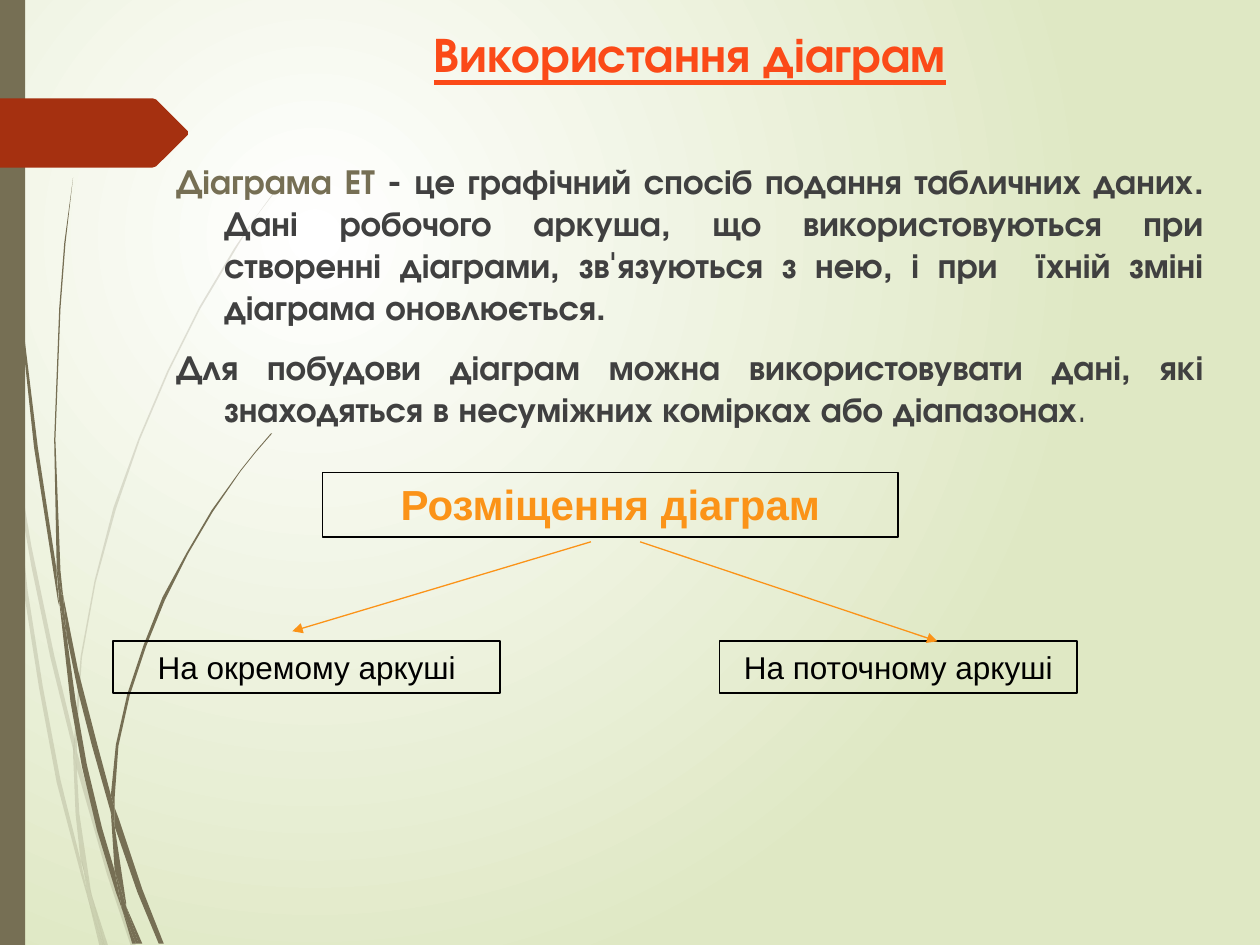
from dataclasses import dataclass

from lxml import etree
from pptx import Presentation
from pptx.dml.color import RGBColor
from pptx.enum import shapes, text
from pptx.oxml import ns
from pptx.util import Inches, Pt


@dataclass(frozen=True)
class Theme:
    olive: str = "766F54"
    rust: str = "A53010"
    title: str = "FB4A18"
    body: str = "404040"
    accent: str = "FB9318"
    black: str = "000000"
    bg_inner: str = "FFFFFF"
    bg_outer: str = "DFE8C4"
    body_font: str = "TeX Gyre Adventor"
    box_font: str = "Arial"
    title_size: int = 28
    body_size: int = 20
    head_size: int = 24
    box_size: int = 18


T = Theme()

# Outlines of the blades of grass, in inches
PALE_BLADES = [
    [(0.08, 3.5), (0.06, 3.22), (0, 2.82), (0, 2.99), (0.07, 3.44)],
    [(0.4, 5.22), (0.59, 5.99), (0.59, 5.86), (0.43, 5.2), (0.25, 4.34),
     (0.1, 3.45), (0.12, 3.76), (0.25, 4.5)],
    [(0.64, 6.07), (0.61, 5.96), (0.61, 6.1), (0.85, 6.94), (1.04, 7.51),
     (1.08, 7.51), (0.88, 6.92)],
    [(0.83, 7.51), (0.86, 7.51), (0.73, 7.11)],
    [(0.64, 6.83), (0.48, 6.19), (0.34, 5.45), (0.22, 4.69), (0.12, 3.76),
     (0.08, 3.5), (0.19, 4.7), (0.31, 5.46), (0.45, 6.21), (0.64, 6.93),
     (0.7, 7.14), (0.69, 7.07)],
    [(0.58, 5.99), (0.6, 6.46), (0.64, 6.83), (0.67, 6.92), (0.73, 7.11),
     (0.72, 7.06), (0.63, 6.46), (0.61, 6.1), (0.61, 6.08)],
    [(0.61, 5.84), (0.65, 5.22), (0.76, 4.62), (0.92, 4.04), (1.11, 3.49),
     (1.34, 2.95), (1.59, 2.45), (1.87, 1.98), (2.01, 1.75), (2.17, 1.54),
     (2.17, 1.53), (2.01, 1.75), (1.86, 1.97), (1.58, 2.44), (1.33, 2.94),
     (1.1, 3.48), (0.9, 4.03), (0.75, 4.61), (0.64, 5.21), (0.59, 5.84),
     (0.59, 5.86), (0.61, 5.96)],
    [(0.7, 7.14), (0.79, 7.51), (0.82, 7.51)],
    [(0.61, 6.08), (0.61, 6.1), (0.61, 5.96), (0.59, 5.86), (0.58, 5.99)],
    [(0.67, 6.92), (0.65, 6.83), (0.69, 7.07), (0.7, 7.14), (0.82, 7.51),
     (0.83, 7.51), (0.73, 7.11)],
]
DARK_BLADES = [
    [(0.05, 1.1), (0.14, 2.33), (0.27, 3.55), (0.46, 4.77), (0.47, 4.81),
     (0.45, 4.57), (0.45, 4.53), (0.3, 3.55), (0.15, 2.32), (0.06, 1.09),
     (0.04, 0.48), (0.03, 0), (0.02, 0), (0.03, 0.48)],
    [(0.73, 5.92), (0.88, 6.45), (0.88, 6.33), (0.88, 6.31), (0.77, 5.9),
     (0.62, 5.32), (0.5, 4.72), (0.53, 5.05), (0.62, 5.49)],
    [(0.94, 6.49), (0.91, 6.41), (0.91, 6.56), (1.09, 7.08), (1.26, 7.49),
     (1.3, 7.49), (1.13, 7.06)],
    [(0.91, 6.91), (0.81, 6.57), (0.69, 6.07), (0.6, 5.56), (0.53, 5.05),
     (0.47, 4.77), (0.56, 5.57), (0.65, 6.08), (0.77, 6.59), (0.92, 7.08),
     (0.97, 7.22), (0.96, 7.17)],
    [(0.5, 4.72), (0.48, 4.53), (0.44, 3.49), (0.48, 2.45), (0.52, 1.93),
     (0.58, 1.41), (0.51, 1.93), (0.47, 2.45), (0.43, 3.49), (0.45, 4.49),
     (0.49, 4.72)],
    [(1.1, 7.49), (1.13, 7.49), (1, 7.19)],
    [(0.47, 4.77), (0.53, 5.05), (0.5, 4.72), (0.49, 4.72), (0.45, 4.49),
     (0.45, 4.53)],
    [(0.91, 6.33), (0.94, 5.92), (1.03, 5.52), (1.16, 5.13), (1.31, 4.76),
     (1.49, 4.4), (1.69, 4.06), (1.91, 3.74), (2.03, 3.59), (2.16, 3.44),
     (2.15, 3.44), (2.03, 3.58), (1.91, 3.73), (1.68, 4.05), (1.48, 4.39),
     (1.29, 4.74), (1.14, 5.12), (1.01, 5.51), (0.92, 5.91), (0.88, 6.31),
     (0.91, 6.41)],
    [(0.97, 7.22), (1.05, 7.49), (1.08, 7.49)],
    [(0.88, 6.45), (0.91, 6.91), (0.96, 7.06), (1, 7.19), (1, 7.16),
     (0.91, 6.56), (0.9, 6.51)],
    [(0.88, 6.45), (0.9, 6.51), (0.91, 6.56), (0.91, 6.41), (0.88, 6.31),
     (0.88, 6.33)],
    [(0.96, 7.06), (0.91, 6.91), (0.96, 7.17), (0.97, 7.22), (1.08, 7.49),
     (1.1, 7.49), (1, 7.19)],
]
ARROW_TAG = [(0, 0.78), (1.21, 0.78), (1.24, 0.79), (1.49, 1.04),
             (1.49, 1.07), (1.24, 1.32), (1.21, 1.33), (0, 1.33)]


def rgb(value):
    return RGBColor.from_string(value)


def set_background(slide):
    fill = slide.background.fill
    fill.gradient()
    for stop, color in zip(fill.gradient_stops, (T.bg_inner, T.bg_outer)):
        stop.color.rgb = rgb(color)
    # Radial gradient centred in the upper left
    lin = slide.element.find(".//" + ns.qn("a:lin"))
    radial = etree.Element(ns.qn("a:path"), path="circle")
    etree.SubElement(radial, ns.qn("a:fillToRect"),
                     l="50000", t="50000", r="100000", b="100000")
    lin.getparent().replace(lin, radial)


def paint(sp, color, alpha=100):
    sp.shadow.inherit = False
    sp.line.fill.background()
    sp.fill.solid()
    sp.fill.fore_color.rgb = rgb(color)
    if alpha < 100:
        clr = sp.element.spPr.find(".//" + ns.qn("a:srgbClr"))
        etree.SubElement(clr, ns.qn("a:alpha"), val=str(alpha * 1000))


def add_polygon(parent, points, color, alpha=100):
    start, *rest = [(Inches(x), Inches(y)) for x, y in points]
    builder = parent.build_freeform(*start)
    builder.add_line_segments(rest, close=True)
    paint(builder.convert_to_shape(), color, alpha)


def add_decoration(slide):
    for blades, alpha in ((PALE_BLADES, 20), (DARK_BLADES, 100)):
        group = slide.shapes.add_group_shape()
        for points in blades:
            add_polygon(group.shapes, points, T.olive, alpha)
    bar = slide.shapes.add_shape(shapes.MSO_SHAPE.RECTANGLE, 0, 0,
                                 Inches(0.2), Inches(7.5))
    paint(bar, T.olive)
    add_polygon(slide.shapes, ARROW_TAG, T.rust)


def add_paragraph(tf, runs, size, align, before):
    p = tf.paragraphs[0] if not tf.paragraphs[0].runs else tf.add_paragraph()
    p.alignment, p.space_before = align, Pt(before)
    p.font.name, p.font.size, p.font.bold = T.body_font, Pt(size), True
    pPr = p._p.get_or_add_pPr()
    pPr.set("marL", str(Inches(0.38)))
    pPr.set("indent", str(-Inches(0.38)))
    for content, color in runs:
        r = p.add_run()
        r.text = content
        r.font.color.rgb = rgb(color)
    return p


def add_body(slide):
    tf = slide.shapes.add_textbox(Inches(1.3), Inches(0.14), Inches(8.35),
                                  Inches(5.15)).text_frame
    tf.word_wrap = True
    p = add_paragraph(tf, [("Використання діаграм", T.title)],
                      T.title_size, text.PP_ALIGN.CENTER, 10)
    p.runs[0].font.underline = True
    justify = text.PP_ALIGN.JUSTIFY
    add_paragraph(tf, [
        ("Діаграма ЕТ", T.olive),
        (" - це графічний спосіб подання табличних даних. Дані робочого "
         "аркуша, що використовуються при створенні діаграми, зв'язуються "
         "з нею, і при  їхній зміні діаграма оновлюється.", T.body),
    ], T.body_size, justify, 44)
    p = add_paragraph(tf, [
        ("Для побудови діаграм можна використовувати дані, які знаходяться "
         "в несуміжних комірках або діапазонах", T.body),
        (".", T.body),
    ], T.body_size, justify, 10)
    p.runs[-1].font.bold = False


def add_box(slide, x, y, w, h, label, size, color, bold=False):
    sp = slide.shapes.add_shape(shapes.MSO_SHAPE.RECTANGLE, Inches(x),
                                Inches(y), Inches(w), Inches(h))
    sp.shadow.inherit = False
    sp.fill.background()
    sp.line.color.rgb = rgb(T.black)
    sp.line.width = Pt(1)
    tf = sp.text_frame
    tf.word_wrap = True
    tf.vertical_anchor = text.MSO_ANCHOR.TOP
    p = tf.paragraphs[0]
    p.text = label
    p.alignment = text.PP_ALIGN.CENTER
    p.font.name, p.font.size, p.font.bold = T.box_font, Pt(size), bold
    p.font.color.rgb = rgb(color)


def add_arrow(slide, x1, y1, x2, y2):
    line = slide.shapes.add_connector(
        shapes.MSO_CONNECTOR.STRAIGHT, Inches(x1), Inches(y1),
        Inches(x2), Inches(y2))
    line.line.color.rgb = rgb(T.accent)
    line.line.width = Pt(0.75)
    ln = line.element.spPr.find(ns.qn("a:ln"))
    etree.SubElement(ln, ns.qn("a:tailEnd"), type="triangle")
    etree.SubElement(line.element.spPr, ns.qn("a:effectLst"))


def main():
    prs = Presentation()
    prs.slide_width, prs.slide_height = Inches(10), Inches(7.5)
    slide = prs.slides.add_slide(prs.slide_layouts[6])

    # Backdrop
    set_background(slide)
    add_decoration(slide)

    # Definition text
    add_body(slide)

    # Placement scheme
    add_box(slide, 2.56, 3.75, 4.57, 0.51, "Розміщення діаграм",
            T.head_size, T.accent, bold=True)
    for x, w, label in ((0.9, 3.07, "На окремому аркуші"),
                        (5.71, 2.84, "На поточному аркуші")):
        add_box(slide, x, 5.09, w, 0.41, label, T.box_size, T.black)
    add_arrow(slide, 4.69, 4.3, 2.32, 5.01)
    add_arrow(slide, 5.08, 4.3, 7.44, 5.09)

    prs.save("out.pptx")


if __name__ == "__main__":
    main()
